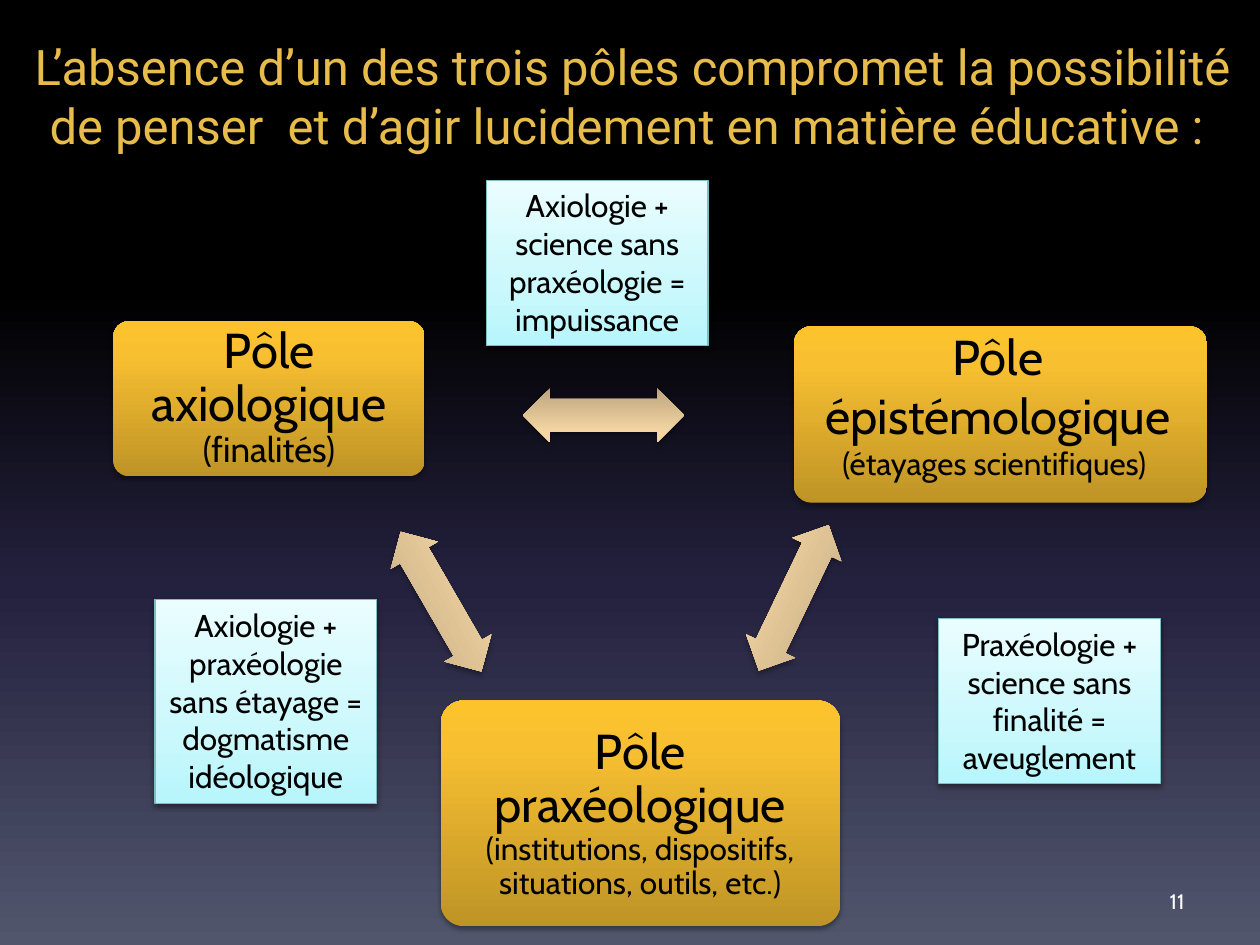
"""Build a slide on the three poles of educational thinking."""
from lxml.etree import SubElement as Sub
from pptx import Presentation as Deck
from pptx.dml.color import RGBColor as Rgb
from pptx.enum.shapes import MSO_SHAPE as Shape
from pptx.enum.text import MSO_ANCHOR as Anchor, MSO_AUTO_SIZE as Auto, PP_ALIGN as Align
from pptx.oxml.ns import qn
from pptx.util import Inches, Pt

HUES = {"ink": "000000", "white": "FFFFFF", "title": "E8BC4A", "edge": "7EBEC3"}
FADES = {
    "back": [(0, "000000"), (31, "000000"), (62, "24213E"), (100, "51566D")],
    "gold": [(0, "BF9426"), (80, "F8C031"), (100, "FDC32D")],
    "sand": [(0, "BCA47E"), (80, "F4D6A3"), (100, "F6D7A2")],
    "ice": [(0, "B6F6FC"), (35, "CBF8FC"), (100, "EAFDFF")],
}


def write(para, text, size=18, font="Cabin", hue="ink", align=Align.CENTER, lead=None):
    """Add a formatted run to a paragraph."""
    run = para.add_run()
    run.text = text
    run.font.size, run.font.name = Pt(size), font
    run.font.color.rgb = Rgb.from_string(HUES[hue])
    para.alignment = align
    if lead:
        para.line_spacing = lead


class Board:
    """Hold the style and the current slide."""

    def __init__(self, deck):
        self.slide = deck.slides.add_slide(deck.slide_layouts[5])
        self.fade(self.slide.background.fill, "back", 270)

    def fade(self, fill, name, angle=90):
        """Fill with a named gradient."""
        fill.gradient()
        fill.gradient_angle = angle
        stops = fill.gradient_stops[0]._gs.getparent()
        for old in list(stops):
            stops.remove(old)
        for pos, hue in FADES[name]:
            stop = Sub(stops, qn("a:gs"), pos=str(pos * 1000))
            Sub(stop, qn("a:srgbClr"), val=hue)

    def shade(self, shape, alpha):
        """Drop a soft shadow below a shape."""
        shape.shadow.inherit = False
        effects = shape._element.spPr.find(qn("a:effectLst"))
        drop = Sub(effects, qn("a:outerShdw"), blurRad=str(Pt(3.1)), dist=str(Pt(1.8)),
                   dir="5400000", rotWithShape="0")
        hue = Sub(drop, qn("a:srgbClr"), val=HUES["ink"])
        Sub(hue, qn("a:alpha"), val=str(alpha * 1000))

    def block(self, kind, box, fill, adjust=(), turn=0, alpha=35):
        """Add a shaded shape without outline."""
        shape = self.slide.shapes.add_shape(kind, *map(Inches, box))
        for i, value in enumerate(adjust):
            shape.adjustments[i] = value
        shape.rotation = turn
        self.fade(shape.fill, fill)
        shape.line.fill.background()
        self.shade(shape, alpha)
        return shape

    def pole(self, box):
        """Add a rounded gold panel."""
        self.block(Shape.ROUNDED_RECTANGLE, box, "gold", [0.1])

    def arrow(self, left, top, turn):
        """Add a double arrow."""
        self.block(Shape.LEFT_RIGHT_ARROW, (left, top, 1.28, 0.43), "sand", [0.6, 0.5], turn)

    def note(self, left, top, high, text):
        """Add an outlined pale note."""
        shape = self.block(Shape.RECTANGLE, (left, top, 1.76, high), "ice", alpha=38)
        shape.line.color.rgb = Rgb.from_string(HUES["edge"])
        shape.line.width = Pt(0.75)
        frame = shape.text_frame
        frame.word_wrap, frame.vertical_anchor = True, Anchor.TOP
        write(frame.paragraphs[0], text)

    def label(self, box, anchor=Anchor.MIDDLE, inset=None):
        """Add a wrapping text box and return its frame."""
        frame = self.slide.shapes.add_textbox(*map(Inches, box)).text_frame
        frame.word_wrap, frame.vertical_anchor = True, anchor
        if inset:
            frame.margin_left = frame.margin_right = Inches(inset)
            frame.margin_top = frame.margin_bottom = Inches(inset)
        return frame

    def title(self, box, text):
        """Move and fill the title placeholder."""
        shape = self.slide.shapes.title
        shape.left, shape.top, shape.width, shape.height = map(Inches, box)
        frame = shape.text_frame
        frame.word_wrap, frame.vertical_anchor = True, Anchor.TOP
        frame.auto_size = Auto.NONE
        write(frame.paragraphs[0], text, size=28, font="Roboto", hue="title")


def main():
    """Build and save the deck."""
    deck = Deck()
    deck.slide_width, deck.slide_height = Inches(10), Inches(7.5)
    board = Board(deck)
    board.title((0.02, 0.24, 10, 1.51),
                "L’absence d’un des trois pôles compromet la possibilité "
                "de penser  et d’agir lucidement en matière éducative : ")

    for box in [(0.9, 2.55, 2.47, 1.23), (6.3, 2.59, 3.28, 1.4), (3.5, 5.56, 3.17, 1.79)]:
        board.pole(box)
    for spot in [(2.86, 4.56, 60), (4.15, 3.08, 180), (5.66, 4.53, 295.6)]:
        board.arrow(*spot)

    for box, inset, name, gloss, size in [
        ((0.94, 2.58, 2.39, 1.16), 0.1, "Pôle axiologique ", "(finalités)", 20),
        ((3.54, 5.62, 3.08, 1.68), 0.07, "Pôle praxéologique ",
         "(institutions, dispositifs, situations, outils, etc.)", 18),
    ]:
        para = board.label(box, inset=inset).paragraphs[0]
        write(para, name, size=28, lead=0.9)
        write(para, gloss, size=size, lead=0.9)
    frame = board.label((6.3, 2.54, 3.24, 1.35), Anchor.TOP)
    write(frame.paragraphs[0], "Pôle épistémologique", size=28)
    write(frame.add_paragraph(), "(étayages scientifiques) ")

    for note in [
        (1.23, 4.76, 1.62, "Axiologie + praxéologie sans étayage = dogmatisme idéologique"),
        (3.86, 1.43, 1.31, "Axiologie + science sans praxéologie = impuissance"),
        (7.45, 4.91, 1.31, "Praxéologie + science sans finalité = aveuglement"),
    ]:
        board.note(*note)

    page = board.label((7.17, 6.95, 2.33, 0.4))
    write(page.paragraphs[0], "11", size=12, hue="white", align=Align.RIGHT)
    deck.save("out.pptx")


if __name__ == "__main__":
    main()
